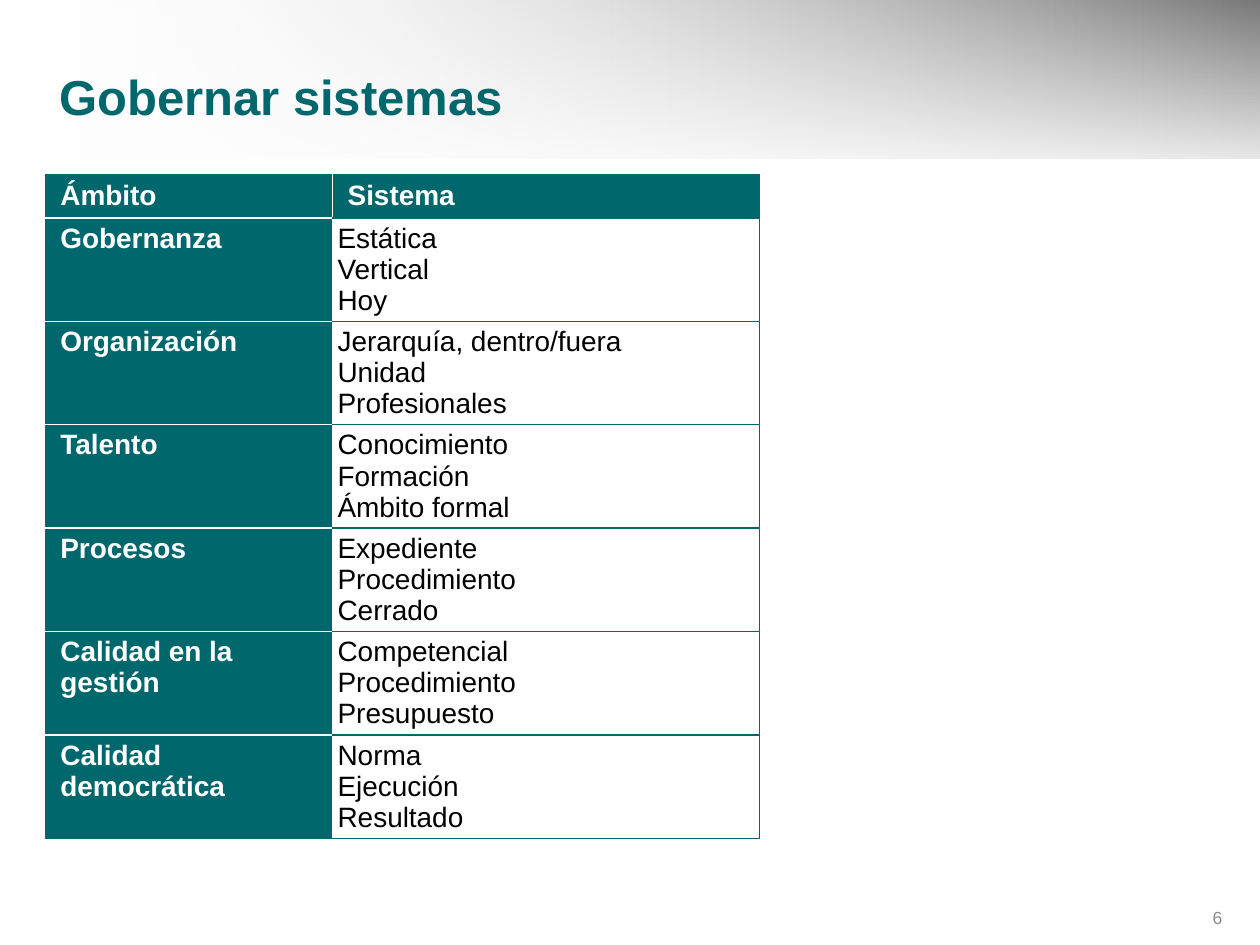
import dataclasses

import lxml.etree
import pptx
import pptx.dml.color
import pptx.enum.shapes
import pptx.enum.text
import pptx.oxml.ns
import pptx.slide
import pptx.table
import pptx.text.text
import pptx.util

COLORS = {
    "teal": "00676C",
    "white": "FFFFFF",
    "black": "000000",
    "gray": "898989",
}
FONT = "Arial"

# The slide is a grid of 100 columns and 75 rows
GRID_COLUMNS, GRID_ROWS = 100, 75
UNIT = pptx.util.Inches(0.1)

ANCHOR = pptx.enum.text.MSO_ANCHOR
ALIGN = pptx.enum.text.PP_ALIGN
qualified = pptx.oxml.ns.qn


@dataclasses.dataclass(frozen=True)
class Band:
    """A gradient across the top; each stop is a colour and its opacity."""
    rows: float
    angle: int
    stops: tuple[tuple[str, int], tuple[str, int]]


@dataclasses.dataclass(frozen=True)
class Area:
    name: str
    features: tuple[str, ...]


@dataclasses.dataclass(frozen=True)
class CellStyle:
    fill: str
    text: str
    bold: bool
    left_inset: float
    right_inset: float


BANDS = (
    Band(12.6, 0, (("white", 0), ("black", 100))),
    Band(15, 270, (("white", 47), ("white", 100))),
)
HEADINGS = ("Ámbito", "Sistema")
AREAS = (
    Area("Gobernanza", ("Estática", "Vertical", "Hoy")),
    Area("Organización", ("Jerarquía, dentro/fuera", "Unidad", "Profesionales")),
    Area("Talento", ("Conocimiento", "Formación", "Ámbito formal")),
    Area("Procesos", ("Expediente", "Procedimiento", "Cerrado")),
    Area("Calidad en la gestión", ("Competencial", "Procedimiento", "Presupuesto")),
    Area("Calidad democrática", ("Norma", "Ejecución", "Resultado")),
)
HEADING_STYLE = CellStyle("teal", "white", True, 1.2, 0.8)
FEATURE_STYLE = CellStyle("white", "black", False, 0.4, 0.4)

TABLE_LEFT, TABLE_TOP = 3.6, 13.9
COLUMN_WIDTHS = (22.8, 33.9)
HEADER_HEIGHT, AREA_HEIGHT = 3.4, 8.2


def grid(count: float) -> int:
    return round(count * UNIT)


def rgb(name: str) -> pptx.dml.color.RGBColor:
    return pptx.dml.color.RGBColor.from_string(COLORS[name])


def write(frame: pptx.text.text.TextFrame, *lines: str, size: float, color: str,
          bold: bool = False, align: ALIGN = ALIGN.LEFT) -> None:
    """Write one paragraph per line in a single format."""
    for index, line in enumerate(lines):
        para = frame.add_paragraph() if index else frame.paragraphs[0]
        para.alignment = align
        span = para.add_run()
        span.text = line
        span.font.name = FONT
        span.font.size = pptx.util.Pt(size)
        span.font.bold = bold
        span.font.color.rgb = rgb(color)


def draw_band(page: pptx.slide.Slide, band: Band) -> None:
    box = page.shapes.add_shape(pptx.enum.shapes.MSO_SHAPE.RECTANGLE,
                                0, 0, grid(GRID_COLUMNS), grid(band.rows))
    box.shadow.inherit = False
    box.line.fill.background()
    box.fill.gradient()
    box.fill.gradient_angle = band.angle
    for stop, (color, _) in zip(box.fill.gradient_stops, band.stops):
        stop.color.rgb = rgb(color)
    tones = box.element.spPr.iter(qualified("a:srgbClr"))
    for tone, (_, opacity) in zip(tones, band.stops):
        alpha = lxml.etree.SubElement(tone, qualified("a:alpha"))
        alpha.set("val", str(opacity * 1000))


def set_borders(cell: pptx.table._Cell, **sides: str) -> None:
    """Draw 1 pt borders; sides are given in the order L, R, T, B."""
    properties = cell._tc.get_or_add_tcPr()
    for index, (side, color) in enumerate(sides.items()):
        line = lxml.etree.Element(qualified(f"a:ln{side}"), w=str(pptx.util.Pt(1)))
        fill = lxml.etree.SubElement(line, qualified("a:solidFill"))
        lxml.etree.SubElement(fill, qualified("a:srgbClr"), val=COLORS[color])
        properties.insert(index, line)


def fill_cell(cell: pptx.table._Cell, style: CellStyle, *lines: str) -> None:
    cell.margin_left, cell.margin_right = grid(style.left_inset), grid(style.right_inset)
    cell.margin_top = cell.margin_bottom = grid(0.4)
    cell.fill.solid()
    cell.fill.fore_color.rgb = rgb(style.fill)
    write(cell.text_frame, *lines, size=16, color=style.text, bold=style.bold)


def draw_table(page: pptx.slide.Slide) -> None:
    heights = (HEADER_HEIGHT,) + (AREA_HEIGHT,) * len(AREAS)
    table = page.shapes.add_table(
        len(heights), len(COLUMN_WIDTHS), grid(TABLE_LEFT), grid(TABLE_TOP),
        grid(sum(COLUMN_WIDTHS)), grid(sum(heights))).table
    table.first_row = table.horz_banding = False
    for column, width in zip(table.columns, COLUMN_WIDTHS):
        column.width = grid(width)
    for row, height in zip(table.rows, heights):
        row.height = grid(height)

    # Header row
    for column, heading in enumerate(HEADINGS):
        fill_cell(table.cell(0, column), HEADING_STYLE, heading)
    set_borders(table.cell(0, 0), L="teal", R="white", T="teal", B="white")
    set_borders(table.cell(0, 1), L="white", R="teal", T="teal", B="teal")

    # One row per area
    for row, area in enumerate(AREAS, start=1):
        name, features = table.cell(row, 0), table.cell(row, 1)
        fill_cell(name, HEADING_STYLE, area.name)
        fill_cell(features, FEATURE_STYLE, *area.features)
        bottom = "teal" if row == len(AREAS) else "white"
        set_borders(name, L="teal", R="white", T="white", B=bottom)
        set_borders(features, L="white", R="teal", T="teal", B="teal")


def main() -> None:
    deck = pptx.Presentation()
    deck.slide_width, deck.slide_height = grid(GRID_COLUMNS), grid(GRID_ROWS)
    page = deck.slides.add_slide(deck.slide_layouts[0])
    subtitle = page.placeholders[1].element
    subtitle.getparent().remove(subtitle)

    # Shaded top
    for band in BANDS:
        draw_band(page, band)

    # Slide number
    number = page.shapes.add_textbox(grid(91.7), grid(71.4), grid(6.3), grid(2.9))
    number.text_frame.word_wrap = True
    number.text_frame.vertical_anchor = ANCHOR.MIDDLE
    write(number.text_frame, "6", size=10, color="gray", align=ALIGN.RIGHT)

    # Title, raised above the shaded top
    title = page.shapes.title
    title.left, title.top = grid(3.7), grid(4.5)
    title.width, title.height = grid(94.3), grid(6.3)
    title.text_frame.vertical_anchor = ANCHOR.MIDDLE
    write(title.text_frame, "Gobernar sistemas", size=28, color="teal", bold=True)
    title.element.getparent().append(title.element)

    draw_table(page)
    deck.save("out.pptx")


if __name__ == "__main__":
    main()
